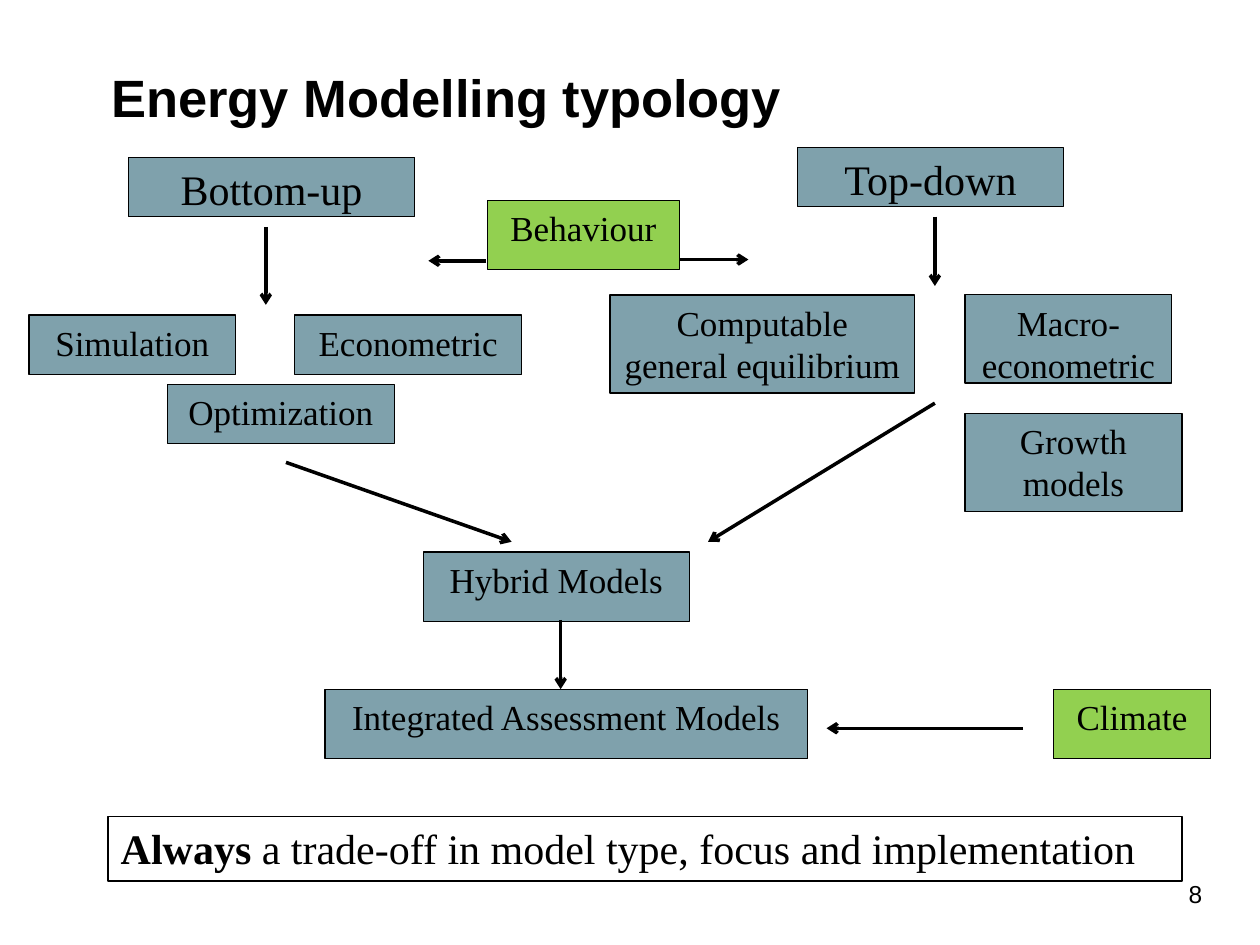
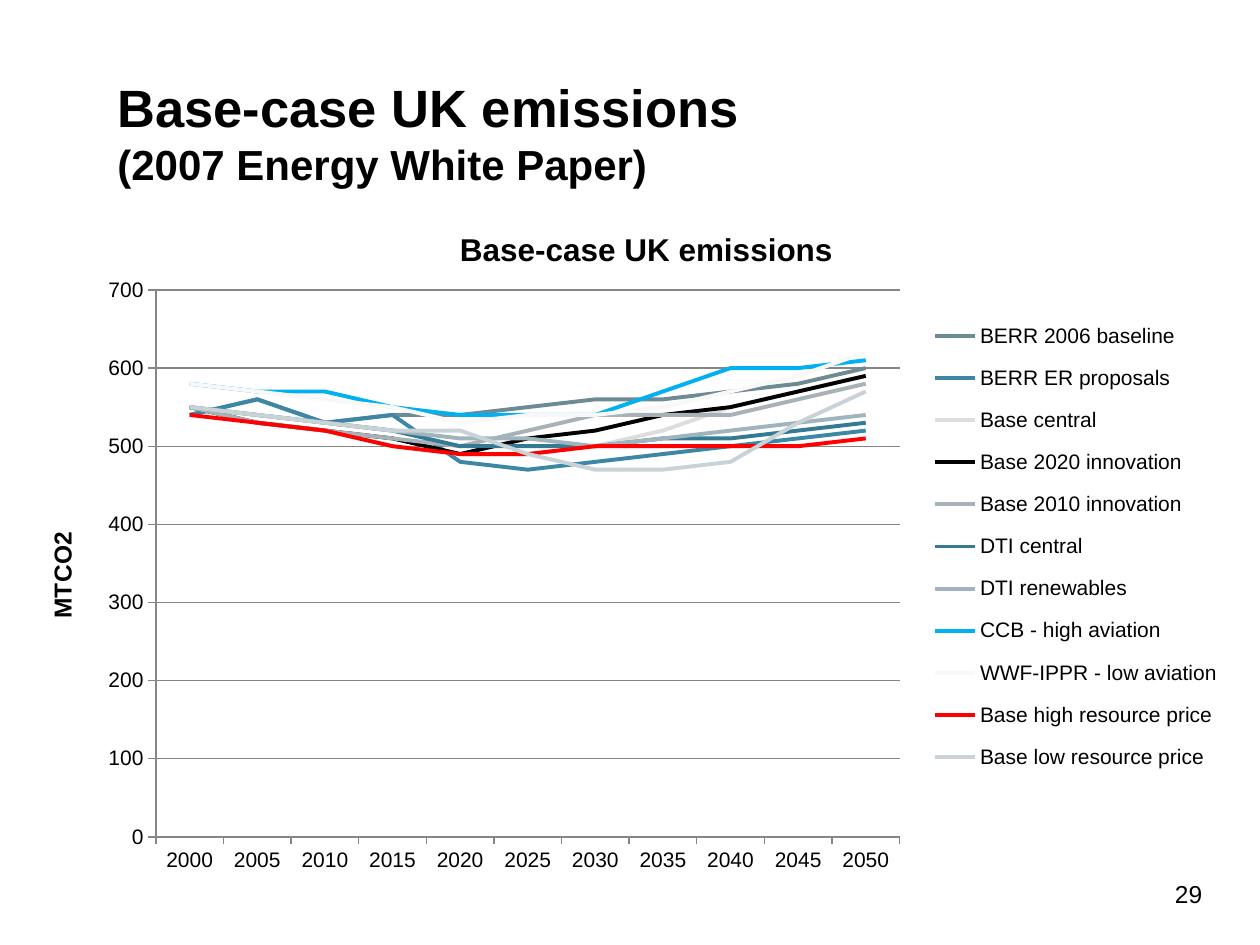
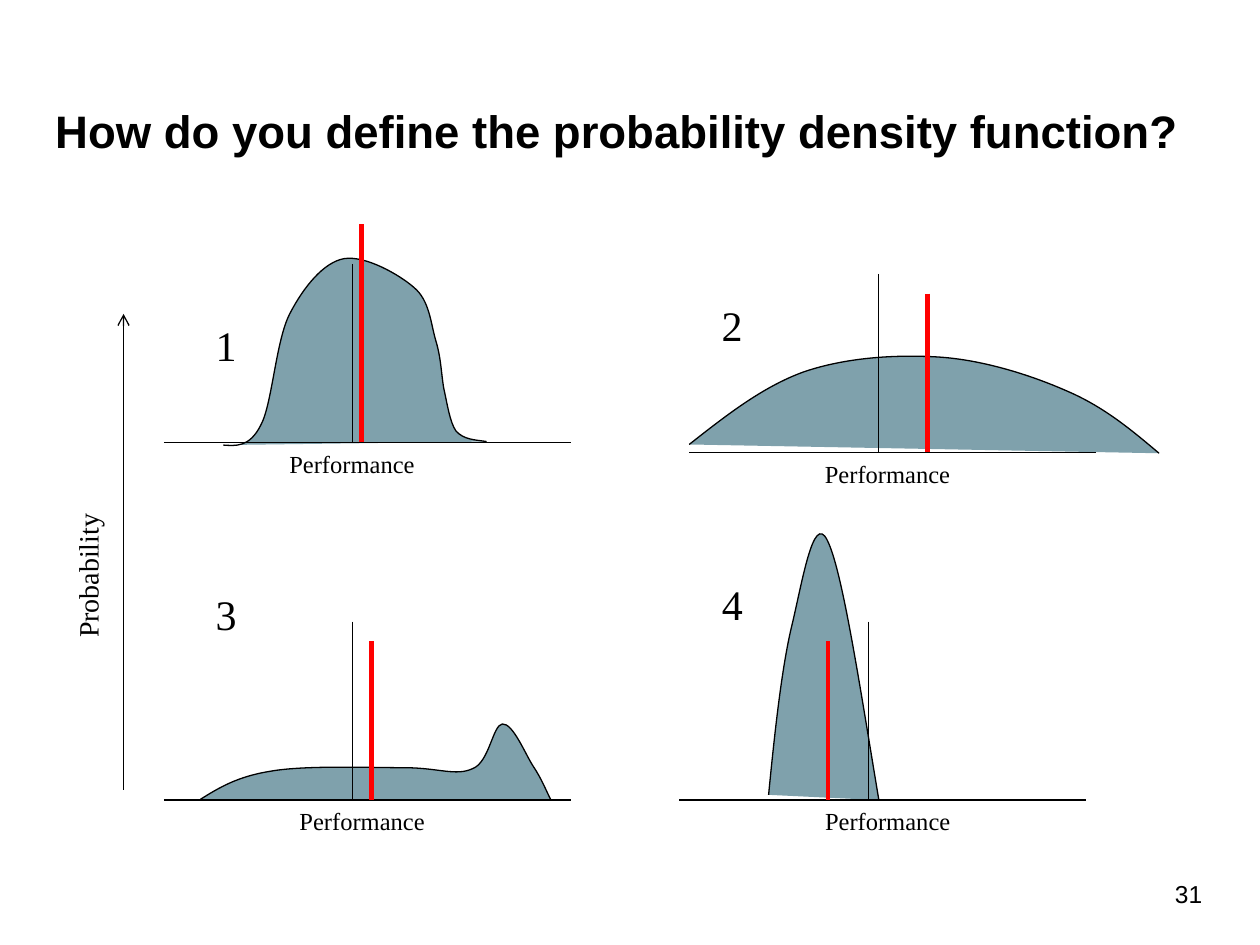
from dataclasses import dataclass

from lxml import etree
from pptx import Presentation
from pptx.chart.data import CategoryChartData
from pptx.dml.color import RGBColor
from pptx.enum.chart import XL_CHART_TYPE, XL_LEGEND_POSITION, XL_MARKER_STYLE, XL_TICK_MARK
from pptx.enum.shapes import MSO_CONNECTOR, MSO_SHAPE
from pptx.enum.text import MSO_ANCHOR, PP_ALIGN
from pptx.oxml.ns import qn
from pptx.util import Pt


@dataclass(frozen=True)
class Theme:
    sans: str = "Arial"
    serif: str = "Times New Roman"
    ink: str = "000000"
    steel: str = "7FA1AC"
    green: str = "92D050"
    red: str = "FF0000"
    grid: str = "868686"
    title: int = 30
    title_small: int = 26
    head: int = 24
    body: int = 20
    chart_title: int = 18
    axis_name: int = 16
    label: int = 14
    tick: int = 12
    thin: float = 0.75
    arrow: float = 2
    series: float = 2.25
    marker: float = 2.75


T = Theme()


def rgb(colour):
    return RGBColor.from_string(colour)


def style(font, size, name=T.sans, bold=False):
    font.size, font.name, font.bold = Pt(size), name, bold
    font.color.rgb = rgb(T.ink)


def write(sp, lines, name=T.serif, align=PP_ALIGN.LEFT, wrap=True):
    tf = sp.text_frame
    tf.word_wrap = wrap
    tf.vertical_anchor = MSO_ANCHOR.TOP
    tf.margin_left = tf.margin_right = Pt(7.2)
    tf.margin_top = tf.margin_bottom = Pt(3.6)
    p = tf.paragraphs[0]
    p.alignment = align
    for i, line in enumerate(lines):
        if i:
            p.add_line_break()
        for text, size, bold in line:
            r = p.add_run()
            r.text = text
            style(r.font, size, name, bold)


def text_box(s, x, y, w, h, lines, **kw):
    sp = s.shapes.add_textbox(Pt(x), Pt(y), Pt(w), Pt(h))
    write(sp, lines, **kw)
    return sp


def paint(sp, fill, width=T.thin):
    sp.shadow.inherit = False
    if fill:
        sp.fill.solid()
        sp.fill.fore_color.rgb = rgb(fill)
    else:
        sp.fill.background()
    sp.line.color.rgb = rgb(T.ink)
    sp.line.width = Pt(width)


def line(s, x1, y1, x2, y2, width=T.thin, colour=T.ink, arrow=False):
    c = s.shapes.add_connector(MSO_CONNECTOR.STRAIGHT, Pt(x1), Pt(y1), Pt(x2), Pt(y2))
    c.line.width = Pt(width)
    c.line.color.rgb = rgb(colour)
    if arrow:
        etree.SubElement(c.line._get_or_add_ln(), qn("a:tailEnd"), type="arrow")
    etree.SubElement(c._element.spPr, qn("a:effectLst"))


def new_slide(prs, number, x, y, w, h, title):
    s = prs.slides.add_slide(prs.slide_layouts[6])
    text_box(s, x, y, w, h, title, name=T.sans)
    text_box(s, 614.9, 498.96, 79.2, 37.44, [[(number, T.label, False)]],
             name=T.sans, align=PP_ALIGN.RIGHT)
    return s


def flow_diagram(s, x, y):
    nodes = [
        ("Bottom-up", 56.88, 5.76, 163.44, 33.84, T.head, T.steel),
        ("Top-down", 439.2, 0, 151.92, 33.84, T.head, T.steel),
        ("Simulation", 0, 95.76, 118.08, 33.84, T.body, T.steel),
        ("Optimization", 79.2, 135.36, 129.6, 33.84, T.body, T.steel),
        ("Econometric", 151.92, 95.76, 129.6, 33.84, T.body, T.steel),
        ("Computable general equilibrium", 331.92, 84.24, 174.24, 56.16, T.body, T.steel),
        ("Macro-econometric", 534.96, 84.24, 118.08, 50.4, T.body, T.steel),
        ("Growth models", 534.96, 151.92, 123.84, 56.16, T.body, T.steel),
        ("Hybrid Models", 225.36, 231.12, 151.92, 39.6, T.body, T.steel),
        ("Integrated Assessment Models", 169.2, 309.6, 275.76, 39.6, T.body, T.steel),
        ("Climate", 585.36, 309.6, 90, 39.6, T.body, T.green),
        ("Behaviour", 262.08, 30.24, 109.44, 39.6, T.body, T.green),
    ]
    for text, dx, dy, w, h, size, fill in nodes:
        sp = s.shapes.add_shape(MSO_SHAPE.FLOWCHART_PROCESS, Pt(x + dx), Pt(y + dy), Pt(w), Pt(h))
        paint(sp, fill)
        write(sp, [[(text, size, False)]], align=PP_ALIGN.CENTER)
    links = [
        (135.36, 45.36, 135.36, 90),
        (517.68, 39.6, 517.68, 79.2),
        (371.52, 64.08, 411.12, 64.08),
        (261.36, 64.8, 228.24, 64.8),
        (146.88, 180, 275.76, 225.36),
        (517.68, 146.16, 388.08, 225.36),
        (303.84, 270, 303.84, 309.6),
        (568.08, 331.92, 455.76, 331.92),
    ]
    for x1, y1, x2, y2 in links:
        line(s, x + x1, y + y1, x + x2, y + y2, T.arrow, arrow=True)


def conclusion(s, x, y, w, h):
    sp = s.shapes.add_shape(MSO_SHAPE.RECTANGLE, Pt(x), Pt(y), Pt(w), Pt(h))
    paint(sp, None, 1)
    write(sp, [[("Always", T.head, True),
                (" a trade-off in model type, focus and implementation", T.head, False)]])


def typology_slide(prs):
    s = new_slide(prs, "8", 56.5, 33.84, 600, 62, [[("Energy Modelling typology", T.title, True)]])
    flow_diagram(s, 16.56, 84.24)
    conclusion(s, 61.92, 466.56, 613.44, 36.72)


YEARS = [str(year) for year in range(2000, 2051, 5)]
EMISSIONS = [
    ("BERR 2006 baseline", "6E8B95", (540, 560, 530, 540, 540, 550, 560, 560, 570, 580, 600)),
    ("BERR ER proposals", "3B87A4", (540, 560, 530, 540, 480, 470, 480, 490, 500, 510, 520)),
    ("Base central", "DDDDDD", (550, 530, 520, 500, 490, 490, 500, 520, 550, 570, 590)),
    ("Base 2020 innovation", T.ink, (550, 530, 520, 510, 490, 510, 520, 540, 550, 570, 590)),
    ("Base 2010 innovation", "A7B2B7", (550, 530, 520, 510, 500, 520, 540, 540, 540, 560, 580)),
    ("DTI central", "357A95", (550, 540, 530, 520, 500, 500, 500, 510, 510, 520, 530)),
    ("DTI renewables", "9FB4BC", (550, 540, 530, 520, 510, 510, 500, 510, 520, 530, 540)),
    ("CCB - high aviation", "00B0F0", (580, 570, 570, 550, 540, 540, 540, 570, 600, 600, 610)),
    ("WWF-IPPR - low aviation", "F8F8F8", (580, 570, 560, 550, 530, 540, 540, 550, 570, 590, 620)),
    ("Base high resource price", T.red, (540, 530, 520, 500, 490, 490, 500, 500, 500, 500, 510)),
    ("Base low resource price", "C9D3D7", (550, 540, 530, 520, 520, 490, 470, 470, 480, 530, 570)),
]


def place(element, before, **values):
    for old in element.findall(qn("c:layout")):
        element.remove(old)
    layout = etree.Element(qn("c:layout"))
    manual = etree.SubElement(layout, qn("c:manualLayout"))
    for tag, val in values.items():
        etree.SubElement(manual, qn("c:" + tag), val=str(val))
    anchor = next((e for e in element if e.tag in [qn("c:" + b) for b in before]), None)
    if anchor is None:
        element.append(layout)
    else:
        anchor.addprevious(layout)


def chart_title(holder, text, size):
    tf = holder.text_frame
    r = tf.paragraphs[0].add_run()
    r.text = text
    style(r.font, size, bold=True)


def emissions_chart(s, x, y, w, h):
    data = CategoryChartData(number_format="General")
    data.categories = YEARS
    for name, _, values in EMISSIONS:
        data.add_series(name, values)
    chart = s.shapes.add_chart(XL_CHART_TYPE.LINE, Pt(x), Pt(y), Pt(w), Pt(h), data).chart
    style(chart.font, T.tick)
    chart.has_title = True
    chart_title(chart.chart_title, "Base-case UK emissions", T.chart_title)
    chart.has_legend = True
    chart.legend.position = XL_LEGEND_POSITION.RIGHT
    chart.legend.include_in_layout = False
    style(chart.legend.font, T.tick)

    for axis in (chart.category_axis, chart.value_axis):
        axis.major_tick_mark = XL_TICK_MARK.OUTSIDE
        axis.format.line.color.rgb = rgb(T.grid)
        style(axis.tick_labels.font, T.tick)
    axis = chart.value_axis
    axis.minimum_scale, axis.maximum_scale, axis.major_unit = 0, 700, 100
    axis.major_gridlines.format.line.color.rgb = rgb(T.grid)
    axis.major_gridlines.format.line.width = Pt(T.thin)
    axis.has_title = True
    chart_title(axis.axis_title, "MTCO2", T.label)

    plot = chart.plots[0]
    plot.vary_by_categories = False
    for series, (_, colour, _) in zip(plot.series, EMISSIONS):
        series.smooth = False
        series.marker.style = XL_MARKER_STYLE.NONE
        series.format.line.color.rgb = rgb(colour)
        series.format.line.width = Pt(T.series)

    edges = dict(xMode="edge", yMode="edge")
    area = chart._chartSpace.chart.plotArea
    tail = ["overlay", "spPr", "txPr"]
    place(area, ["lineChart"], layoutTarget="inner", **edges,
          x=77.6 / w, y=53.2 / h, w=425 / w, h=312.6 / h)
    place(chart.legend._element, tail, **edges, x=516 / w, y=61.8 / h, w=175 / w, h=276 / h)
    place(chart.chart_title._element, tail, **edges, x=248 / w, y=15.2 / h)


def emissions_slide(prs):
    s = new_slide(prs, "29", 60, 39.6, 600, 73,
                  [[("Base-case UK emissions", T.title, True)],
                   [("(2007 Energy White Paper)", T.head, True)]])
    emissions_chart(s, 11.5, 112.5, 692, 394)


CURVES = {
    "1": [(34, 1.5), (41, 2), (49, 3), (55.5, -10), (62, -22), (64, -58), (72, -73.5),
          (80, -89), (91.5, -103), (103, -105), (115, -107), (134.5, -96), (143, -88.5),
          (152, -81), (152.5, -68), (155.5, -58), (158.5, -48), (158.5, -40), (160, -31),
          (162, -22), (163.5, -11.5), (167, -6.5), (171.5, -1.5), (178, -1.5), (184.5, -0.5)],
    "2": [(0, -4.5), (21, -21), (42, -37.5), (65.5, -46), (89, -54), (116.5, -56), (142, -54.5),
          (167, -53), (194.5, -44.5), (216, -35), (237, -26), (252.5, -13), (268.5, 0.5)],
    "3": [(21, -0.5), (31.5, -7), (42, -13.5), (61, -16.5), (80.5, -20), (118, -18.5),
          (137.5, -18.5), (157, -18.5), (167, -13.5), (176.5, -18), (186, -21.5), (188, -43),
          (193.5, -43.5), (199.5, -44), (206.5, -26.5), (211, -19.5), (216, -12),
          (218, -6.5), (221, -0.5)],
    "4": [(51, -3), (54.5, -39), (58.5, -75), (64, -98.5), (70, -123), (76.5, -165),
          (84.5, -148.5), (93, -132), (103, -66), (114, 0)],
}


def curve(s, x, y, knots):
    points = [(Pt(x + dx), Pt(y + dy)) for dx, dy in knots]
    fb = s.shapes.build_freeform(*points[0])
    fb.add_line_segments(points[1:], close=False)
    sp = fb.convert_to_shape()
    segments = list(sp._element.iter(qn("a:lnTo")))
    for i in range(0, len(segments), 3):
        bend = etree.Element(qn("a:cubicBezTo"))
        segments[i].addprevious(bend)
        for segment in segments[i:i + 3]:
            bend.append(segment[0])
            segment.getparent().remove(segment)
    paint(sp, T.steel)


def density_panel(s, x, y, number, number_at, label_dx, marker_dx, marker_h):
    curve(s, x, y, CURVES[number])
    line(s, x, y, x + 232.56, y)
    line(s, x + 108, y - 102, x + 108, y)
    line(s, x + marker_dx, y - marker_h, x + marker_dx, y, T.marker, T.red)
    text_box(s, x + label_dx, y, 136, 24.5, [[("Performance", T.label, False)]],
             align=PP_ALIGN.CENTER)
    dx, dy = number_at
    text_box(s, x + dx, y + dy, 28, 36.5, [[(number, T.head, False)]], wrap=False)


def probability_axis(s, x, y, h):
    line(s, x, y + h, x, y, arrow=True)
    sp = text_box(s, x - 65.5, y + 134, 90, 26.5, [[("Probability", T.axis_name, False)]], wrap=False)
    sp.rotation = 270


def density_slide(prs):
    s = new_slide(prs, "31", 24.5, 55.44, 659, 102,
                  [[("How do you define the probability density function?", T.title_small, True)]])
    density_panel(s, 93.6, 252.8, "1", (22.5, -73.5), 39.6, 113, 124.6)
    density_panel(s, 393.84, 258.5, "2", (11.5, -90.7), 45.4, 136, 90.7)
    density_panel(s, 93.6, 457.2, "3", (22.5, -124.6), 45.4, 118.8, 90.7)
    density_panel(s, 388.2, 457.2, "4", (17.3, -130.3), 51.1, 85, 90.7)
    probability_axis(s, 70.6, 179.4, 272)


def main():
    prs = Presentation()
    prs.slide_width, prs.slide_height = Pt(720), Pt(540)
    typology_slide(prs)
    emissions_slide(prs)
    density_slide(prs)
    prs.save("out.pptx")


if __name__ == "__main__":
    main()
